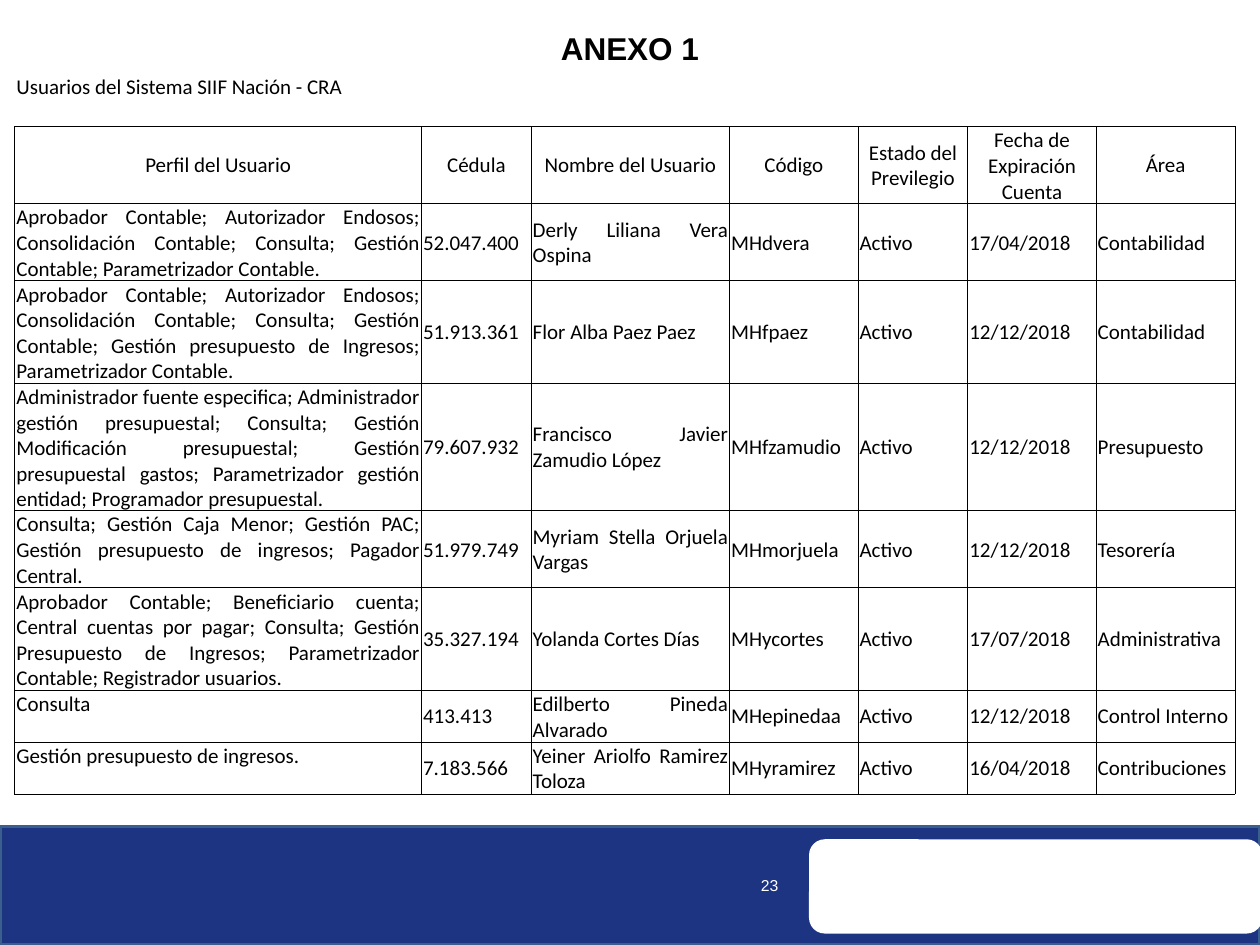
from lxml.etree import SubElement
from pptx import Presentation
from pptx.dml.color import RGBColor
from pptx.enum.shapes import MSO_SHAPE
from pptx.enum.text import MSO_ANCHOR, PP_ALIGN
from pptx.oxml.ns import qn
from pptx.util import Cm, Pt

BLACK = RGBColor(0x00, 0x00, 0x00)
WHITE = RGBColor(0xFF, 0xFF, 0xFF)
NAVY = RGBColor(0x1C, 0x34, 0x81)
STEEL = RGBColor(0x3A, 0x5F, 0x8C)

CAPTION = "Usuarios del Sistema SIIF Nación - CRA"
HEADINGS = ("Perfil del Usuario", "Cédula", "Nombre del Usuario", "Código",
            "Estado del Previlegio", "Fecha de Expiración Cuenta", "Área")
USERS = (
    ("Aprobador Contable; Autorizador Endosos; Consolidación Contable; Consulta; "
     "Gestión Contable; Parametrizador Contable.",
     "52.047.400", "Derly Liliana Vera Ospina", "MHdvera", "Activo", "17/04/2018", "Contabilidad"),
    ("Aprobador Contable; Autorizador Endosos; Consolidación Contable; Consulta; "
     "Gestión Contable; Gestión presupuesto de Ingresos; Parametrizador Contable.",
     "51.913.361", "Flor Alba Paez Paez", "MHfpaez", "Activo", "12/12/2018", "Contabilidad"),
    ("Administrador fuente especifica; Administrador gestión presupuestal; Consulta; "
     "Gestión Modificación presupuestal; Gestión presupuestal gastos; "
     "Parametrizador gestión entidad; Programador presupuestal.",
     "79.607.932", "Francisco Javier Zamudio López", "MHfzamudio", "Activo", "12/12/2018", "Presupuesto"),
    ("Consulta; Gestión Caja Menor; Gestión PAC; Gestión presupuesto de ingresos; "
     "Pagador Central.",
     "51.979.749", "Myriam Stella Orjuela Vargas", "MHmorjuela", "Activo", "12/12/2018", "Tesorería"),
    ("Aprobador Contable; Beneficiario cuenta; Central cuentas por pagar; Consulta; "
     "Gestión Presupuesto de Ingresos; Parametrizador Contable; Registrador usuarios.",
     "35.327.194", "Yolanda Cortes Días", "MHycortes", "Activo", "17/07/2018", "Administrativa"),
    ("Consulta", "413.413", "Edilberto Pineda Alvarado", "MHepinedaa", "Activo",
     "12/12/2018", "Control Interno"),
    ("Gestión presupuesto de ingresos.", "7.183.566", "Yeiner Ariolfo Ramirez Toloza",
     "MHyramirez", "Activo", "16/04/2018", "Contribuciones"),
)
COLUMN_WIDTHS = (8.2, 2.21, 4, 2.59, 2.21, 2.59, 2.8)
LINES_PER_ROW = (1, 1, 3, 3, 4, 5, 3, 4, 2, 2)
LINE_HEIGHT = 0.51
HEADING_ROW = 2


def style_paragraph(paragraph, font_name, size, color, align=PP_ALIGN.LEFT, bold=False):
    """Set the alignment and font of one paragraph."""
    paragraph.alignment = align
    font = paragraph.font
    font.name, font.size, font.bold = font_name, Pt(size), bold
    font.color.rgb = color


def add_block(slide, preset, left, top, width, height, color):
    """Add a plain filled shape without an outline."""
    block = slide.shapes.add_shape(preset, Cm(left), Cm(top), Cm(width), Cm(height))
    block.shadow.inherit = False
    block.fill.solid()
    block.fill.fore_color.rgb = color
    block.line.fill.background()
    return block


def add_label(slide, text, left, top, width, height, size, color, **style):
    """Add a single-line Arial text box."""
    label = slide.shapes.add_textbox(Cm(left), Cm(top), Cm(width), Cm(height))
    label.text_frame.word_wrap = True
    label.text_frame.text = text
    style_paragraph(label.text_frame.paragraphs[0], "Arial", size, color, **style)


def add_footer(slide, left, top, width, height):
    """Draw the footer band with its white panel and page number."""
    band = add_block(slide, MSO_SHAPE.RECTANGLE, left, top, width, height, NAVY)
    band.line.color.rgb = STEEL
    band.line.width = Pt(2)
    add_block(slide, MSO_SHAPE.ROUNDED_RECTANGLE, left + 16.31, top + 0.26, 9.14, 1.9, WHITE)
    add_label(slide, "23", left + 15.09, top + 0.87, 1, 0.63, 9, WHITE)


def set_borders(cell, visible):
    """Give a cell thin black borders, or none."""
    properties = cell._tc.get_or_add_tcPr()
    for side in ("a:lnL", "a:lnR", "a:lnT", "a:lnB"):
        line = SubElement(properties, qn(side), w=str(Pt(0.5)))
        if visible:
            fill = SubElement(line, qn("a:solidFill"))
            SubElement(fill, qn("a:srgbClr"), val=str(BLACK))
        else:
            SubElement(line, qn("a:noFill"))


def fill_cell(cell, text, align, anchor, bordered):
    """Write and style one table cell."""
    cell.margin_left = cell.margin_right = cell.margin_top = Cm(0.03)
    cell.margin_bottom = 0
    cell.vertical_anchor = anchor
    set_borders(cell, bordered)
    cell.fill.background()
    cell.text = text
    paragraph = cell.text_frame.paragraphs[0]
    style_paragraph(paragraph, "Calibri", 12, BLACK, align)
    if not text:
        SubElement(paragraph._p, qn("a:endParaRPr"), sz="1200")


def add_user_table(slide, left, top):
    """Build the user table with its caption, spacer and heading rows."""
    blanks = ("",) * len(HEADINGS)
    records = ((CAPTION, *blanks[1:]), blanks, HEADINGS, *USERS)
    table = slide.shapes.add_table(
        len(records), len(HEADINGS), Cm(left), Cm(top),
        Cm(sum(COLUMN_WIDTHS)), Cm(sum(LINES_PER_ROW) * LINE_HEIGHT)).table
    table.first_row = table.horz_banding = False
    for column, width in zip(table.columns, COLUMN_WIDTHS):
        column.width = Cm(width)
    for row, lines in zip(table.rows, LINES_PER_ROW):
        row.height = Cm(lines * LINE_HEIGHT)
    for row_index, record in enumerate(records):
        is_heading = row_index == HEADING_ROW
        align = PP_ALIGN.CENTER if is_heading else PP_ALIGN.JUSTIFY
        for column_index, text in enumerate(record):
            is_profile = column_index == 0 and not is_heading
            anchor = MSO_ANCHOR.TOP if is_profile else MSO_ANCHOR.MIDDLE
            fill_cell(table.cell(row_index, column_index), text, align, anchor,
                      row_index >= HEADING_ROW)
    table.cell(0, 0).merge(table.cell(0, len(HEADINGS) - 1))


def main():
    """Build and save the slide."""
    deck = Presentation()
    deck.slide_width, deck.slide_height = Cm(25.4), Cm(19.05)
    slide = deck.slides.add_slide(deck.slide_layouts[6])
    add_footer(slide, 0, 16.66, 25.4, 2.39)
    add_label(slide, "ANEXO 1", 0, 0.46, 25.4, 1.02, 18, BLACK,
              align=PP_ALIGN.CENTER, bold=True)
    add_user_table(slide, 0.3, 1.47)
    deck.save("out.pptx")


if __name__ == "__main__":
    main()
